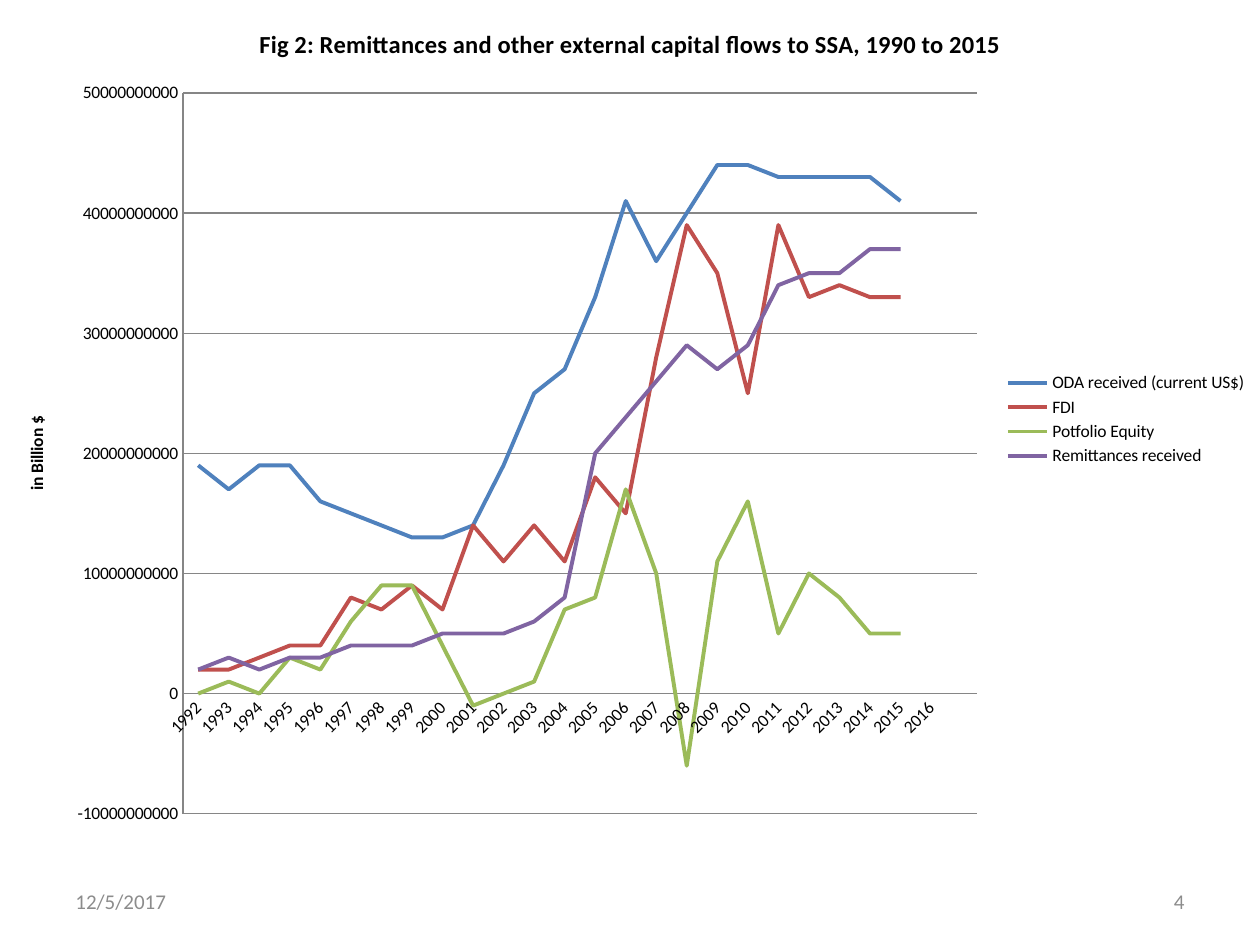
import dataclasses

import pptx
import pptx.chart.data
import pptx.dml.color
import pptx.enum.chart
import pptx.enum.text
import pptx.oxml
import pptx.oxml.ns
import pptx.util

EMU_PER_PX = 914400 / 126
SLIDE_WIDTH, SLIDE_HEIGHT = 1260, 945
BILLION = 10**9


@dataclasses.dataclass(frozen=True)
class Theme:
    """Colours, font and type sizes of the slide."""
    font: str = "Calibri"
    text: str = "000000"
    footer: str = "8C8C8C"
    rule: str = "868686"
    title_size: int = 14
    label_size: int = 10
    footer_size: int = 12
    line_width: float = 2.25
    rule_width: float = 0.75


THEME = Theme()
YEARS = [str(year) for year in range(1992, 2017)] + [""]
FLOWS_IN_BILLIONS = [
    ("ODA received (current US$)", "4F81BD",
     [19, 17, 19, 19, 16, 15, 14, 13, 13, 14, 19, 25,
      27, 33, 41, 36, 40, 44, 44, 43, 43, 43, 43, 41]),
    ("FDI", "C0504D",
     [2, 2, 3, 4, 4, 8, 7, 9, 7, 14, 11, 14,
      11, 18, 15, 28, 39, 35, 25, 39, 33, 34, 33, 33]),
    ("Potfolio Equity", "9BBB59",
     [0, 1, 0, 3, 2, 6, 9, 9, 4, -1, 0, 1,
      7, 8, 17, 10, -6, 11, 16, 5, 10, 8, 5, 5]),
    ("Remittances received", "8064A2",
     [2, 3, 2, 3, 3, 4, 4, 4, 5, 5, 5, 6,
      8, 20, 23, 26, 29, 27, 29, 34, 35, 35, 37, 37]),
]


def px(length):
    """Turn px into EMU."""
    return pptx.util.Emu(round(length * EMU_PER_PX))


def style_font(font, size, color, bold=False):
    """Apply the theme font with a size, colour and weight."""
    font.name = THEME.font
    font.size = pptx.util.Pt(size)
    font.bold = bold
    font.color.rgb = pptx.dml.color.RGBColor.from_string(color)


def style_line(line, color, width):
    """Give a line its colour and width in points."""
    line.color.rgb = pptx.dml.color.RGBColor.from_string(color)
    line.width = pptx.util.Pt(width)


def write_title(title, text, size):
    """Write a bold chart or axis title."""
    title.text_frame.text = text
    run = title.text_frame.paragraphs[0].runs[0]
    style_font(run.font, size, THEME.text, bold=True)


def place_part(chart, part_query, box, **lengths):
    """Fix a chart part at px lengths within the chart box."""
    part = chart.element.xpath(part_query)[0]
    for layout in part.findall(pptx.oxml.ns.qn("c:layout")):
        part.remove(layout)
    inner = '<c:layoutTarget val="inner"/>' if part.tag.endswith("plotArea") else ""
    modes = "".join(f'<c:{key}Mode val="edge"/>' for key in "xy")
    values = "".join(
        f'<c:{key} val="{length / box[2 if key in "xw" else 3]:.4f}"/>'
        for key, length in lengths.items())
    layout = pptx.oxml.parse_xml(
        f'<c:layout {pptx.oxml.ns.nsdecls("c")}><c:manualLayout>'
        f'{inner}{modes}{values}</c:manualLayout></c:layout>')
    overlay = part.find(pptx.oxml.ns.qn("c:overlay"))
    if overlay is None:
        part.insert(0, layout)
    else:
        overlay.addprevious(layout)


def style_axes(chart):
    """Format the year axis and the dollar axis."""
    value_axis, year_axis = chart.value_axis, chart.category_axis
    value_axis.minimum_scale = -10 * BILLION
    value_axis.maximum_scale = 50 * BILLION
    value_axis.major_unit = 10 * BILLION
    value_axis.has_major_gridlines = True
    style_line(value_axis.major_gridlines.format.line, THEME.rule, THEME.rule_width)
    value_axis.tick_labels.number_format = "General"
    value_axis.tick_labels.number_format_is_linked = False
    write_title(value_axis.axis_title, "in Billion $", THEME.label_size)
    for axis in (value_axis, year_axis):
        axis.major_tick_mark = pptx.enum.chart.XL_TICK_MARK.NONE
        axis.minor_tick_mark = pptx.enum.chart.XL_TICK_MARK.NONE
        style_line(axis.format.line, THEME.rule, THEME.rule_width)
        style_font(axis.tick_labels.font, THEME.label_size, THEME.text)
    for query, rotation in (("//c:catAx/c:txPr/a:bodyPr", -45),
                            ("//c:valAx/c:title//a:bodyPr", -90)):
        body = chart.element.xpath(query)[0]
        body.set("rot", str(rotation * 60000))
        body.set("vert", "horz")


def add_flows_chart(slide, box):
    """Add the line chart of capital flows in the given box."""
    data = pptx.chart.data.CategoryChartData()
    data.categories = YEARS
    for name, _, billions in FLOWS_IN_BILLIONS:
        dollars = [amount * BILLION for amount in billions]
        data.add_series(name, dollars + [None] * (len(YEARS) - len(dollars)))
    chart = slide.shapes.add_chart(
        pptx.enum.chart.XL_CHART_TYPE.LINE, *map(px, box), data).chart
    style_font(chart.font, THEME.label_size, THEME.text)
    chart.has_title = True
    write_title(chart.chart_title,
                "Fig 2: Remittances and other external capital flows to SSA, 1990 to 2015",
                THEME.title_size)
    chart.has_legend = True
    chart.legend.position = pptx.enum.chart.XL_LEGEND_POSITION.RIGHT
    chart.legend.include_in_layout = False
    style_font(chart.legend.font, THEME.label_size, THEME.text)
    style_axes(chart)
    chart.plots[0].vary_by_categories = False
    for series, (_, color, _) in zip(chart.plots[0].series, FLOWS_IN_BILLIONS):
        series.smooth = False
        series.marker.style = pptx.enum.chart.XL_MARKER_STYLE.NONE
        style_line(series.format.line, color, THEME.line_width)
    place_part(chart, "c:chart/c:plotArea", box, x=183, y=93, w=794, h=721)
    place_part(chart, "c:chart/c:title", box, x=255, y=22)
    place_part(chart, "//c:valAx/c:title", box, x=22, y=413)
    place_part(chart, "c:chart/c:legend", box, x=1003, y=368, w=246, h=103)


def add_footer_text(slide, box, text, alignment):
    """Add one grey footer entry in the given box."""
    frame = slide.shapes.add_textbox(*map(px, box)).text_frame
    frame.word_wrap = True
    frame.vertical_anchor = pptx.enum.text.MSO_ANCHOR.MIDDLE
    frame.text = text
    paragraph = frame.paragraphs[0]
    paragraph.alignment = alignment
    style_font(paragraph.runs[0].font, THEME.footer_size, THEME.footer)


def add_footer(slide, box):
    """Add the date at the left and the page number at the right of the box."""
    left, top, width, height = box
    entry_width = 294
    add_footer_text(slide, (left, top, entry_width, height), "12/5/2017",
                    pptx.enum.text.PP_ALIGN.LEFT)
    add_footer_text(slide, (left + width - entry_width, top, entry_width, height), "4",
                    pptx.enum.text.PP_ALIGN.RIGHT)


def main():
    """Build the slide and save it."""
    deck = pptx.Presentation()
    deck.slide_width, deck.slide_height = px(SLIDE_WIDTH), px(SLIDE_HEIGHT)
    slide = deck.slides.add_slide(deck.slide_layouts[6])
    add_flows_chart(slide, (0, 0, SLIDE_WIDTH, 840))
    add_footer(slide, (63, 876, SLIDE_WIDTH - 2 * 63, 50))
    deck.save("out.pptx")


if __name__ == "__main__":
    main()
